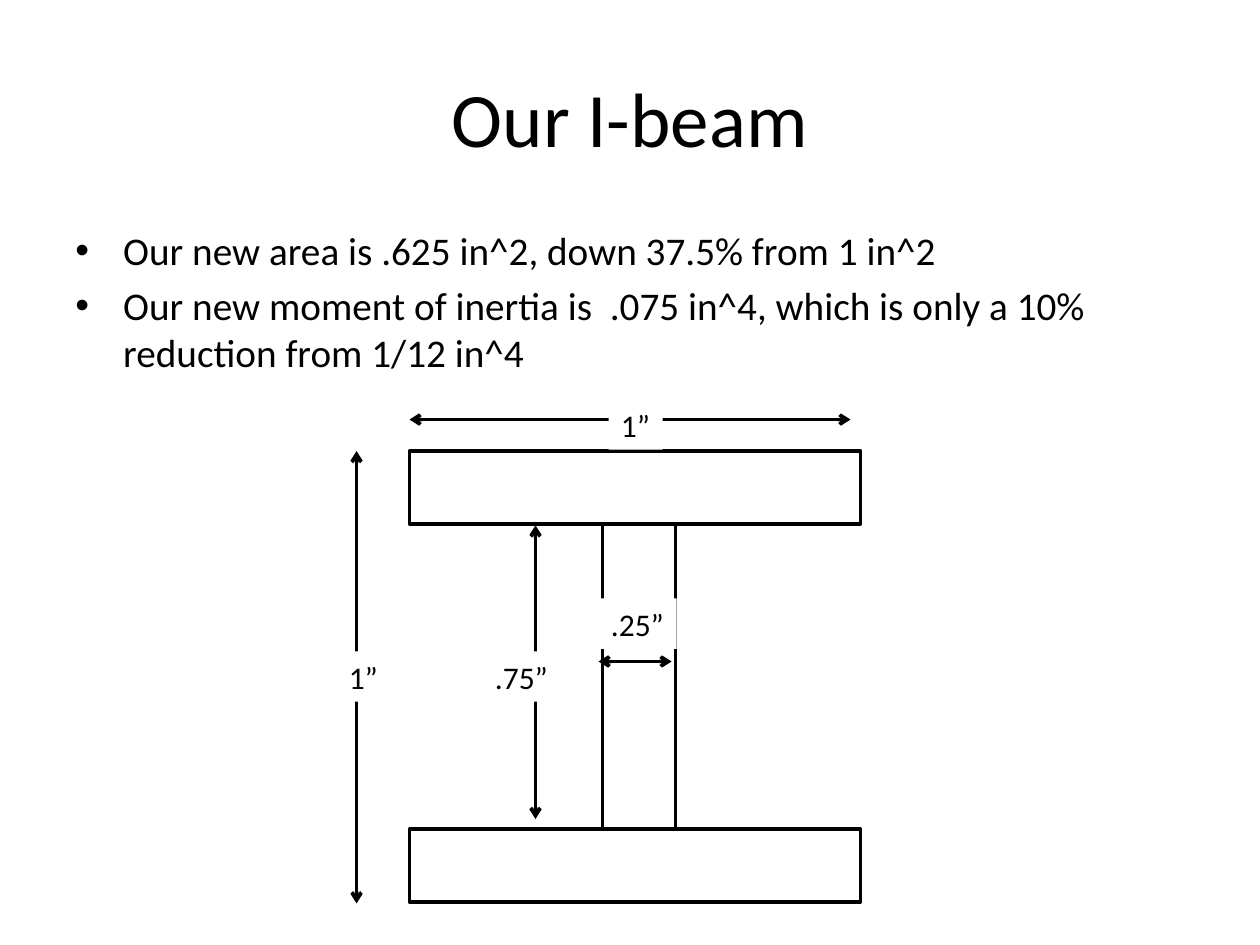
from lxml import etree
from pptx import Presentation
from pptx.dml.color import RGBColor
from pptx.enum.shapes import MSO_CONNECTOR, MSO_SHAPE
from pptx.enum.text import MSO_ANCHOR, MSO_AUTO_SIZE, PP_ALIGN
from pptx.oxml.ns import qn
from pptx.util import Inches, Pt

RECTANGLE = MSO_SHAPE.RECTANGLE
STRAIGHT = MSO_CONNECTOR.STRAIGHT
TOP, MIDDLE = MSO_ANCHOR.TOP, MSO_ANCHOR.MIDDLE
LEFT, CENTER = PP_ALIGN.LEFT, PP_ALIGN.CENTER
GROW = MSO_AUTO_SIZE.SHAPE_TO_FIT_TEXT

COLORS = {"ink": "000000", "paper": "FFFFFF"}
FONT = "Calibri"
LINE_WIDTH = 2
SIZES = {"title": 44, "body": 22.4, "label": 18}

FACTS = [
    "Our new area is .625 in^2, down 37.5% from 1 in^2",
    "Our new moment of inertia is  .075 in^4, which is only a 10% reduction from 1/12 in^4",
]

BEAM_LEFT, BEAM_TOP, BEAM_SIZE = 3.25, 3.58, 3.58
THICKNESS = 0.58
LOWER_TOP = BEAM_TOP + BEAM_SIZE - THICKNESS
WEB_TOP = BEAM_TOP + THICKNESS
WEB_LEFT = 4.78

BEAM_PARTS = [
    (BEAM_LEFT, BEAM_TOP, BEAM_SIZE, THICKNESS),
    (BEAM_LEFT, LOWER_TOP, BEAM_SIZE, THICKNESS),
    (WEB_LEFT, WEB_TOP, THICKNESS, LOWER_TOP - WEB_TOP),
]
DIMENSION_LINES = [
    ((2.83, BEAM_TOP), (2.83, 7.17)),
    ((4.25, 4.17), (4.25, 6.5)),
    ((6.75, 3.33), (BEAM_LEFT, 3.33)),
    ((5.33, 5.25), (4.75, 5.25)),
]
DIMENSION_LABELS = [
    ("1”", 2.67, 5.17, 0.43),
    ("1”", 4.83, 3.17, 0.43),
    (".75”", 3.83, 5.17, 0.63),
    (".25”", 4.75, 4.75, 0.62),
]


def set_all(target, values):
    """Set every attribute of target named in values."""
    for name, value in values.items():
        setattr(target, name, value)


class BeamSlide:
    """Draws the parts of the beam slide in one style."""

    def __init__(self, slide):
        self.slide = slide

    def color(self, name):
        """Return a palette colour."""
        return RGBColor.from_string(COLORS[name])

    def place(self, shape, left, top, width, height):
        """Move and size a shape in inches."""
        set_all(shape, {"left": Inches(left), "top": Inches(top),
                        "width": Inches(width), "height": Inches(height)})

    def add_text(self, paragraph, text, role, align=LEFT):
        """Fill a paragraph with text in the style of its role."""
        paragraph.alignment = align
        run = paragraph.add_run()
        run.text = text
        set_all(run.font, {"name": FONT, "size": Pt(SIZES[role])})
        run.font.color.rgb = self.color("ink")

    def stroke(self, line):
        """Give a line the drawing style."""
        line.color.rgb = self.color("ink")
        line.width = Pt(LINE_WIDTH)

    def title(self, text):
        """Set the slide title."""
        title = self.slide.shapes.title
        self.place(title, 0.5, 0.3, 9, 1.25)
        title.text_frame.vertical_anchor = MIDDLE
        self.add_text(title.text_frame.paragraphs[0], text, "title", CENTER)

    def bullets(self, facts):
        """Add the bulleted facts."""
        frame = self.slide.shapes.add_textbox(
            Inches(0.5), Inches(1.75), Inches(9), Inches(1.17)).text_frame
        set_all(frame, {"word_wrap": True, "vertical_anchor": TOP})
        for index, fact in enumerate(facts):
            paragraph = frame.add_paragraph() if index else frame.paragraphs[0]
            self.add_text(paragraph, fact, "body")
            paragraph.space_before = Pt(4.5)
            properties = paragraph._p.get_or_add_pPr()
            properties.set("marL", str(Inches(0.38)))
            properties.set("indent", str(-Inches(0.38)))
            etree.SubElement(properties, qn("a:buFont"), typeface="Arial")
            etree.SubElement(properties, qn("a:buChar"), char="•")

    def rectangle(self, left, top, width, height):
        """Add a plain rectangle and return it."""
        shape = self.slide.shapes.add_shape(
            RECTANGLE, Inches(left), Inches(top), Inches(width), Inches(height))
        shape.shadow.inherit = False
        return shape

    def beam_part(self, left, top, width, height):
        """Draw an outlined part of the beam."""
        part = self.rectangle(left, top, width, height)
        part.fill.background()
        self.stroke(part.line)

    def dimension(self, start, end):
        """Draw a line with an arrowhead at both ends."""
        arrow = self.slide.shapes.add_connector(
            STRAIGHT, *(Inches(value) for value in start + end))
        self.stroke(arrow.line)
        outline = arrow.line._get_or_add_ln()
        for end_tag in ("a:headEnd", "a:tailEnd"):
            etree.SubElement(outline, qn(end_tag), type="arrow")
        etree.SubElement(arrow._element.spPr, qn("a:effectLst"))

    def label(self, text, left, top, width):
        """Set a dimension on a paper-coloured patch."""
        patch = self.rectangle(left, top, width, 0.4)
        patch.fill.solid()
        patch.fill.fore_color.rgb = self.color("paper")
        patch.line.fill.background()
        set_all(patch.text_frame, {"word_wrap": False, "auto_size": GROW,
                                   "vertical_anchor": TOP})
        self.add_text(patch.text_frame.paragraphs[0], text, "label")


def main():
    """Build and save the slide."""
    deck = Presentation()
    set_all(deck, {"slide_width": Inches(10), "slide_height": Inches(7.5)})
    beam = BeamSlide(deck.slides.add_slide(deck.slide_layouts.get_by_name("Title Only")))
    beam.title("Our I-beam")
    beam.bullets(FACTS)
    for part in BEAM_PARTS:
        beam.beam_part(*part)
    for start, end in DIMENSION_LINES:
        beam.dimension(start, end)
    for label in DIMENSION_LABELS:
        beam.label(*label)
    deck.save("out.pptx")


if __name__ == "__main__":
    main()
